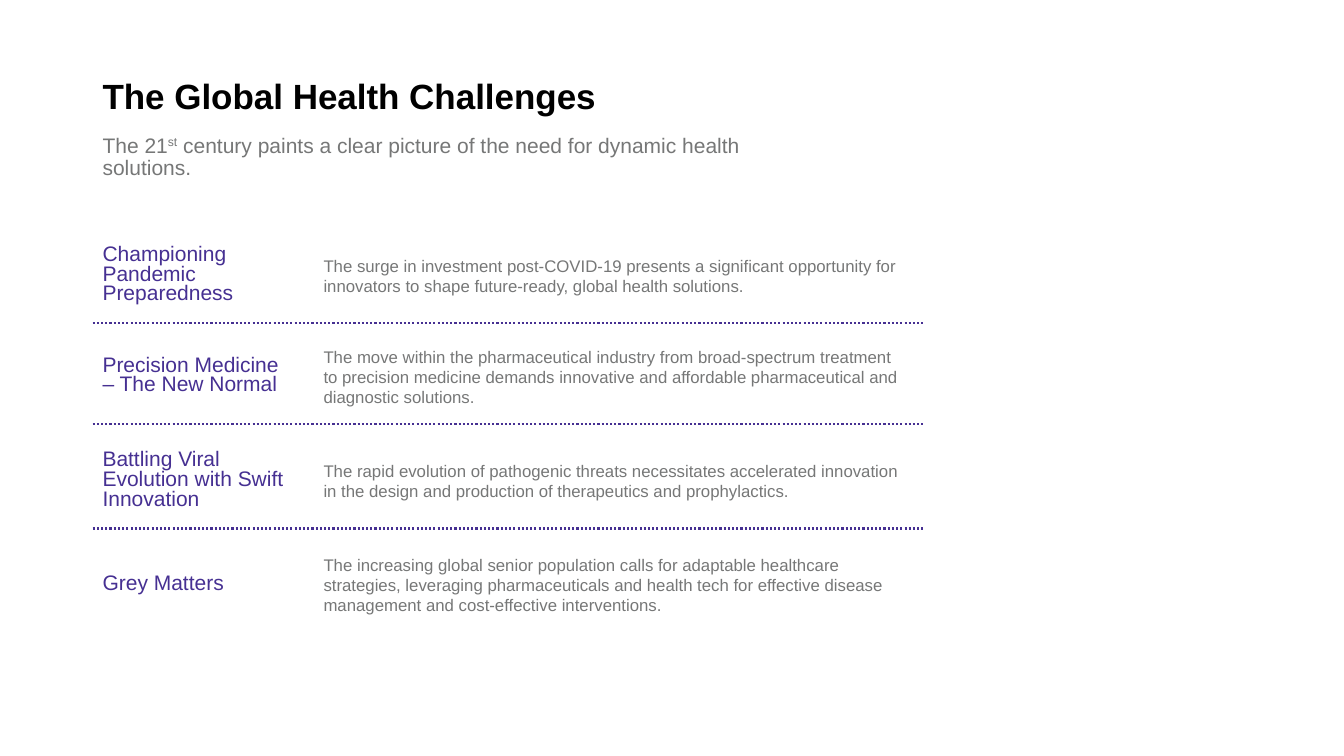
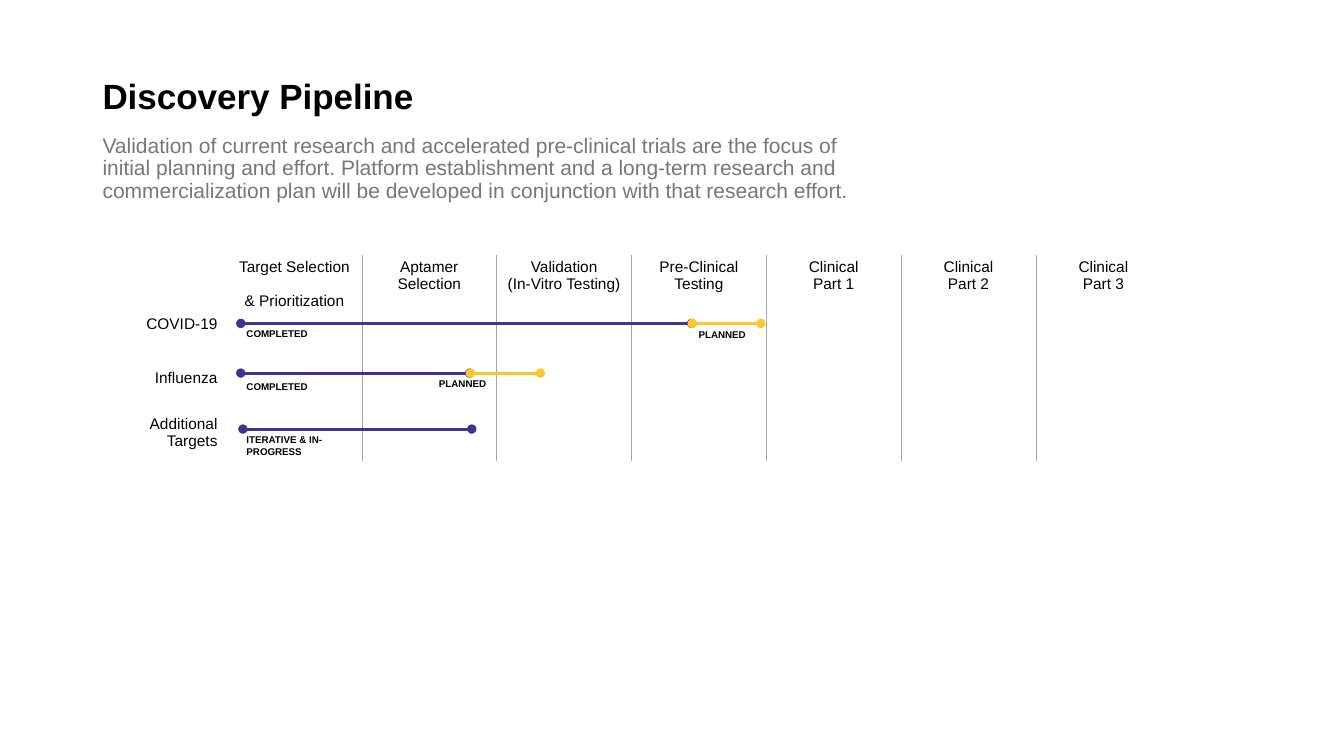
from pptx import Presentation
from pptx import util as u
from pptx.dml.color import RGBColor
from pptx.enum import dml, shapes, text
from pptx.oxml.ns import qn
from lxml import etree

Pt = u.Pt
FONT = "Arial"
BLACK, GREY, PURPLE, YELLOW, RULE = "000000", "767777", "463092", "FFC72C", "A6A6A6"
LEFT = 66.2

# Content: a tuple is one paragraph whose every second part is superscript
CHALLENGES = {
    "title": "The Global Health Challenges",
    "subtitle": ("The 21", "st", " century paints a clear picture of the need for dynamic health solutions."),
    "subtitle_width": 502,
}
# Label, description, centre of the row
CHALLENGE_ROWS = [
    ("Championing Pandemic Preparedness",
     "The surge in investment post-COVID-19 presents a significant opportunity for innovators "
     "to shape future-ready, global health solutions.", 197),
    ("Precision Medicine – The New Normal",
     "The move within the pharmaceutical industry from broad-spectrum treatment to precision "
     "medicine demands innovative and affordable pharmaceutical and diagnostic solutions.", 269),
    ("Battling Viral Evolution with Swift Innovation",
     "The rapid evolution of pathogenic threats necessitates accelerated innovation in the "
     "design and production of therapeutics and prophylactics.", 343.5),
    ("Grey Matters",
     "The increasing global senior population calls for adaptable healthcare strategies, "
     "leveraging pharmaceuticals and health tech for effective disease management and "
     "cost-effective interventions.", 417.5),
]

PIPELINE = {
    "title": "Discovery Pipeline",
    "subtitle": "Validation of current research and accelerated pre-clinical trials are the focus of "
                "initial planning and effort. Platform establishment and a long-term research and "
                "commercialization plan will be developed in conjunction with that research effort.",
    "subtitle_width": 567.5,
}
# Heading lines, space between them
STAGES = [
    (["Target Selection", "& Prioritization"], 12),
    (["Aptamer", "Selection"], 0),
    (["Validation", "(In-Vitro Testing)"], 0),
    (["Pre-Clinical", "Testing"], 0),
    (["Clinical", "Part 1"], 0),
    (["Clinical", "Part 2"], 0),
    (["Clinical", "Part 3"], 0),
]
TARGETS = ["COVID-19", "Influenza", "Additional Targets"]
# Colour, start, end, height of the bar; caption, its left and top
BARS = [
    (PURPLE, 172, 494, 231, "COMPLETED", 169, 230.5),
    (YELLOW, 494.5, 543.5, 231, "PLANNED", 492, 231),
    (PURPLE, 172, 335.5, 266.5, "COMPLETED", 169, 268.5),
    (YELLOW, 336, 386, 266.5, "PLANNED", 306.5, 266.5),
    (PURPLE, 173.5, 337, 306.5, "ITERATIVE & IN-PROGRESS", 169, 306.5),
]


def color(value):
    return RGBColor.from_string(value)


def add_text(slide, paragraphs, left, top, width, height, size=11, fill=BLACK, bold=False,
             align=text.PP_ALIGN.LEFT, anchor=text.MSO_ANCHOR.TOP, spacing=None, gap=0):
    frame = slide.shapes.add_textbox(Pt(left), Pt(top), Pt(width), Pt(height)).text_frame
    frame.word_wrap = True
    frame.vertical_anchor = anchor
    if not isinstance(paragraphs, list):
        paragraphs = [paragraphs]
    for index, parts in enumerate(paragraphs):
        paragraph = frame.add_paragraph() if index else frame.paragraphs[0]
        paragraph.alignment = align
        if spacing:
            paragraph.line_spacing = spacing
        if index and gap:
            paragraph.space_before = Pt(gap)
        for position, part in enumerate([parts] if isinstance(parts, str) else parts):
            run = paragraph.add_run()
            run.text = part
            font = run.font
            font.name, font.size, font.bold = FONT, Pt(size), bold
            font.color.rgb = color(fill)
            if position % 2:
                run._r.get_or_add_rPr().set("baseline", "30000")


def add_line(slide, x1, y1, x2, y2, stroke, width, dash=None, dots=False):
    connector = slide.shapes.add_connector(
        shapes.MSO_CONNECTOR.STRAIGHT, Pt(x1), Pt(y1), Pt(x2), Pt(y2))
    line = connector.line
    line.color.rgb = color(stroke)
    line.width = Pt(width)
    if dash:
        line.dash_style = dash
    properties = connector._element.spPr
    if dots:
        for end in ("a:headEnd", "a:tailEnd"):
            etree.SubElement(properties.find(qn("a:ln")), qn(end), type="oval")
    etree.SubElement(properties, qn("a:effectLst"))


def add_slide(presentation, heading):
    slide = presentation.slides.add_slide(presentation.slide_layouts[6])
    add_text(slide, heading["title"], LEFT, 49, 828, 44, size=25, bold=True,
             anchor=text.MSO_ANCHOR.MIDDLE, spacing=Pt(25))
    add_text(slide, heading["subtitle"], LEFT, 93, heading["subtitle_width"], 44,
             size=15, fill=GREY, spacing=0.9)
    return slide


def build_challenges(presentation):
    slide = add_slide(presentation, CHALLENGES)
    middle, height = text.MSO_ANCHOR.MIDDLE, 50
    for index, (label, description, centre) in enumerate(CHALLENGE_ROWS):
        top = centre - height / 2
        add_text(slide, label, LEFT, top, 150, height, size=15, fill=PURPLE,
                 anchor=middle, spacing=Pt(14))
        add_text(slide, description, 224, top, 433.5, height, size=12, fill=GREY, anchor=middle)
        if index < len(CHALLENGE_ROWS) - 1:
            rule = centre + 34
            add_line(slide, LEFT, rule, 661, rule, PURPLE, 1.5, dash=dml.MSO_LINE.ROUND_DOT)


def build_pipeline(presentation):
    slide = add_slide(presentation, PIPELINE)
    first, pitch = 162.2, 96.3

    # Stage headings and dividers
    for index, (lines, gap) in enumerate(STAGES):
        left = first + index * pitch
        add_text(slide, lines, left, 181.5, pitch, 32, align=text.PP_ALIGN.CENTER,
                 spacing=Pt(12), gap=gap)
        if index:
            add_line(slide, left, 182, left, 329, RULE, 0.5)

    # Target names
    for index, target in enumerate(TARGETS):
        add_text(slide, target, LEFT, 221.8 + index * 38.9, 96.3, 19.4,
                 align=text.PP_ALIGN.RIGHT, anchor=text.MSO_ANCHOR.MIDDLE, spacing=Pt(12))

    # Progress bars with captions
    for stroke, start, end, y, caption, left, top in BARS:
        add_line(slide, start, y, end, y, stroke, 2.25, dots=True)
        add_text(slide, caption, left, top, 80, 16, size=7, bold=True)


def main():
    presentation = Presentation()
    presentation.slide_width, presentation.slide_height = Pt(960), Pt(540)
    build_challenges(presentation)
    build_pipeline(presentation)
    presentation.save("out.pptx")


if __name__ == "__main__":
    main()
